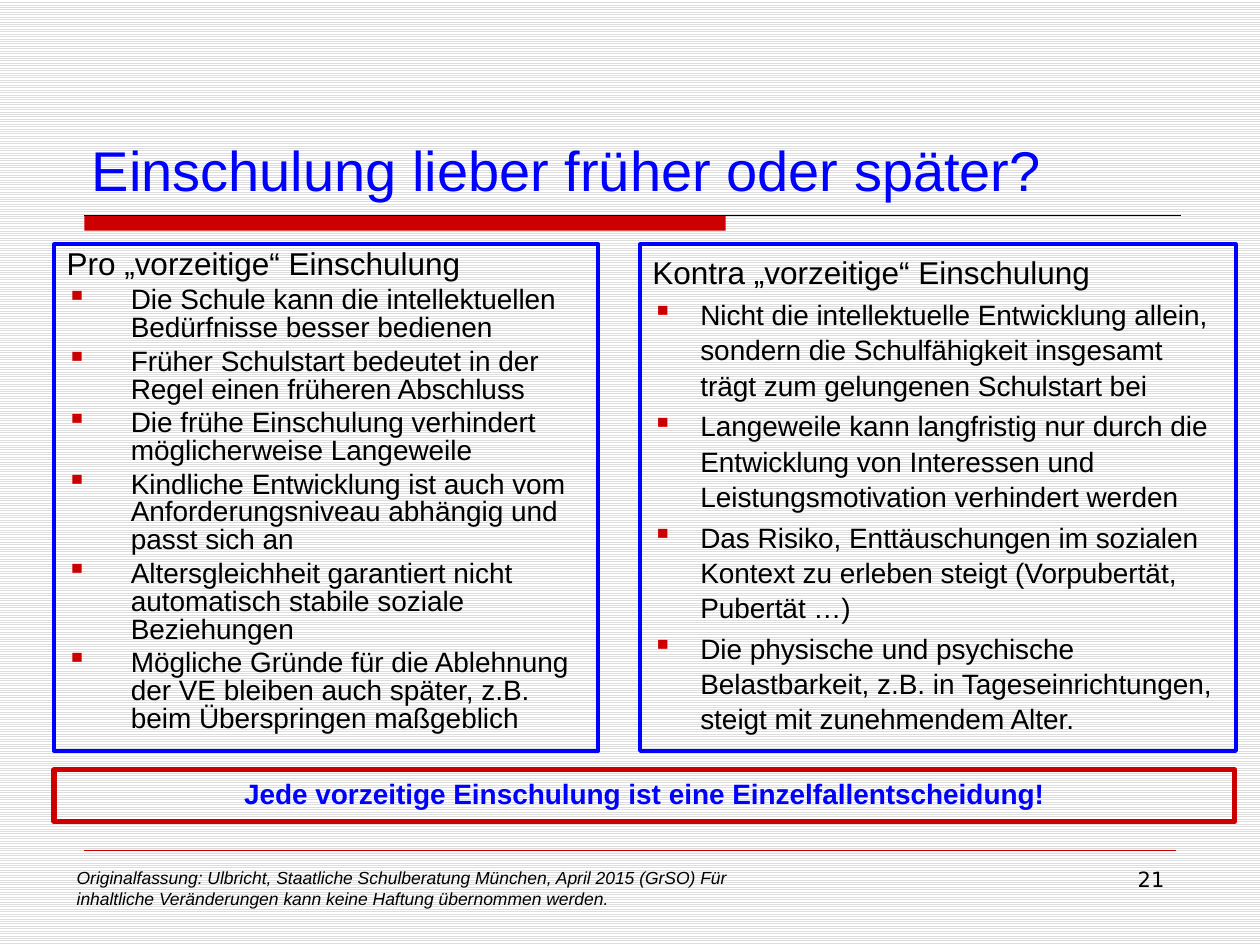
from dataclasses import dataclass

import pptx
import pptx.dml.color
import pptx.enum.dml
import pptx.enum.shapes
import pptx.enum.text
import pptx.util
from lxml import etree
from pptx.oxml.ns import qn

Inches = pptx.util.Inches
Pt = pptx.util.Pt
Rgb = pptx.dml.color.RGBColor
Align = pptx.enum.text.PP_ALIGN
Anchor = pptx.enum.text.MSO_ANCHOR


@dataclass(frozen=True)
class Theme:
    blue: Rgb = Rgb(0x00, 0x00, 0xFF)
    red: Rgb = Rgb(0xCC, 0x00, 0x00)
    black: Rgb = Rgb(0x00, 0x00, 0x00)
    white: Rgb = Rgb(0xFF, 0xFF, 0xFF)
    grey: Rgb = Rgb(0xDD, 0xDD, 0xDD)
    font: str = "Arial"
    digits: str = "DejaVu Sans"
    title: int = 32
    head: int = 18
    body: int = 16
    page: int = 12
    foot: int = 10


THEME = Theme()

PRO = [
    "Die Schule kann die intellektuellen Bedürfnisse besser bedienen",
    "Früher Schulstart bedeutet in der Regel einen früheren Abschluss",
    "Die frühe Einschulung verhindert möglicherweise Langeweile",
    "Kindliche Entwicklung ist auch vom Anforderungsniveau abhängig und passt sich an",
    "Altersgleichheit garantiert nicht automatisch stabile soziale Beziehungen",
    "Mögliche Gründe für die Ablehnung der VE bleiben auch später, z.B. "
    "beim Überspringen maßgeblich",
]
KONTRA = [
    "Nicht die intellektuelle Entwicklung allein, sondern die Schulfähigkeit "
    "insgesamt trägt zum gelungenen Schulstart bei",
    "Langeweile kann langfristig nur durch die Entwicklung von Interessen und "
    "Leistungsmotivation verhindert werden",
    "Das Risiko, Enttäuschungen im sozialen Kontext zu erleben steigt "
    "(Vorpubertät, Pubertät …)",
    "Die physische und psychische Belastbarkeit, z.B. in Tageseinrichtungen, "
    "steigt mit zunehmendem Alter.",
]


def place(box):
    return [Inches(x) for x in box]


def style(para, color=THEME.black, align=Align.LEFT, **format):
    para.alignment = align
    values = {"name": THEME.font, **format}
    for key, value in values.items():
        setattr(para.font, key, value)
    para.font.color.rgb = color


def label(slide, box, text, anchor=Anchor.TOP, **format):
    frame = slide.shapes.add_textbox(*place(box)).text_frame
    frame.word_wrap = True
    frame.vertical_anchor = anchor
    frame.text = text
    style(frame.paragraphs[0], **format)


def block(slide, box, fill=None, line=None, width=0):
    shape = slide.shapes.add_shape(
        pptx.enum.shapes.MSO_SHAPE.RECTANGLE, *place(box))
    shape.shadow.inherit = False
    if fill is None:
        shape.fill.background()
    else:
        shape.fill.solid()
        shape.fill.fore_color.rgb = fill
    if line is None:
        shape.line.fill.background()
    else:
        shape.line.color.rgb = line
        shape.line.width = Pt(width)
    frame = shape.text_frame
    frame.word_wrap = True
    frame.vertical_anchor = Anchor.TOP
    return frame


def rule(slide, left, right, y, color, width):
    line = slide.shapes.add_connector(
        pptx.enum.shapes.MSO_CONNECTOR.STRAIGHT,
        *place((left, y, right, y)))
    line.line.color.rgb = color
    line.line.width = Pt(width)
    etree.SubElement(line._element.spPr, qn("a:effectLst"))


def bullet(para):
    props = para._p.get_or_add_pPr()
    color = etree.SubElement(props, qn("a:buClr"))
    etree.SubElement(color, qn("a:srgbClr"), val=str(THEME.red))
    etree.SubElement(props, qn("a:buChar"), char="▪")


def panel(slide, box, head, items, indent, spacing):
    """Framed column with a heading and bulleted items."""
    frame = block(slide, box, line=THEME.blue, width=2.25)
    frame.text = "\n".join([head, *items])
    for index, para in enumerate(frame.paragraphs):
        props = para._p.get_or_add_pPr()
        props.set("marL", str(Inches(indent)))
        props.set("indent", str(-Inches(indent)))
        para.line_spacing = spacing
        if index:
            para.space_before = Pt(THEME.body * 0.2)
            bullet(para)
        style(para, size=Pt(THEME.body if index else THEME.head))


def backdrop(slide):
    fill = slide.background.fill
    fill.patterned()
    fill.pattern = pptx.enum.dml.MSO_PATTERN.LIGHT_HORIZONTAL
    fill.fore_color.rgb = THEME.grey
    fill.back_color.rgb = THEME.white


def main():
    deck = pptx.Presentation()
    deck.slide_width, deck.slide_height = Inches(10), Inches(7.5)
    slide = deck.slides.add_slide(deck.slide_layouts[6])
    backdrop(slide)

    block(slide, (0.67, 1.71, 5.09, 0.12), fill=THEME.red)
    rule(slide, 0.67, 9.37, 1.71, THEME.black, 0.75)
    rule(slide, 0.67, 9.33, 6.75, THEME.red, 0.25)

    label(slide, (0.51, 6.83, 5.51, 0.52),
          "Originalfassung: Ulbricht, Staatliche Schulberatung München, "
          "April 2015 (GrSO) Für inhaltliche Veränderungen kann keine "
          "Haftung übernommen werden.",
          size=Pt(THEME.foot), italic=True)
    label(slide, (7.17, 6.83, 2.17, 0.52), "21", align=Align.RIGHT,
          name=THEME.digits, size=Pt(THEME.page))
    label(slide, (0.63, 0.33, 8.75, 1.33),
          "Einschulung lieber früher oder später?", anchor=Anchor.BOTTOM,
          color=THEME.blue, size=Pt(THEME.title))

    panel(slide, (0.43, 1.94, 4.32, 4.02), "Pro „vorzeitige“ Einschulung",
          PRO, indent=0.51, spacing=0.83)
    panel(slide, (5.08, 1.94, 4.73, 4.02), "Kontra „vorzeitige“ Einschulung",
          KONTRA, indent=0.38, spacing=1.05)

    frame = block(slide, (0.43, 6.11, 9.37, 0.41), line=THEME.red, width=3)
    frame.text = "Jede vorzeitige Einschulung ist eine Einzelfallentscheidung!"
    style(frame.paragraphs[0], color=THEME.blue, align=Align.CENTER,
          size=Pt(THEME.body), bold=True)

    deck.save("out.pptx")


if __name__ == "__main__":
    main()
